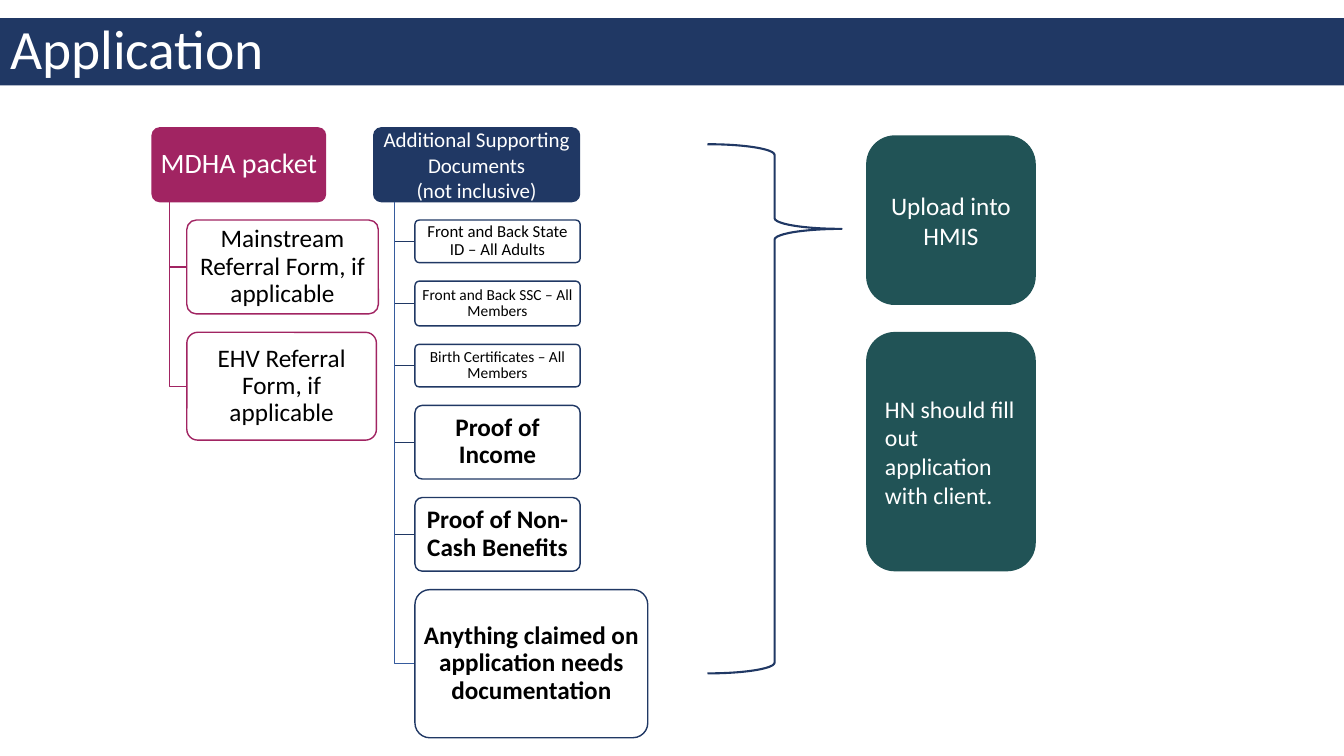
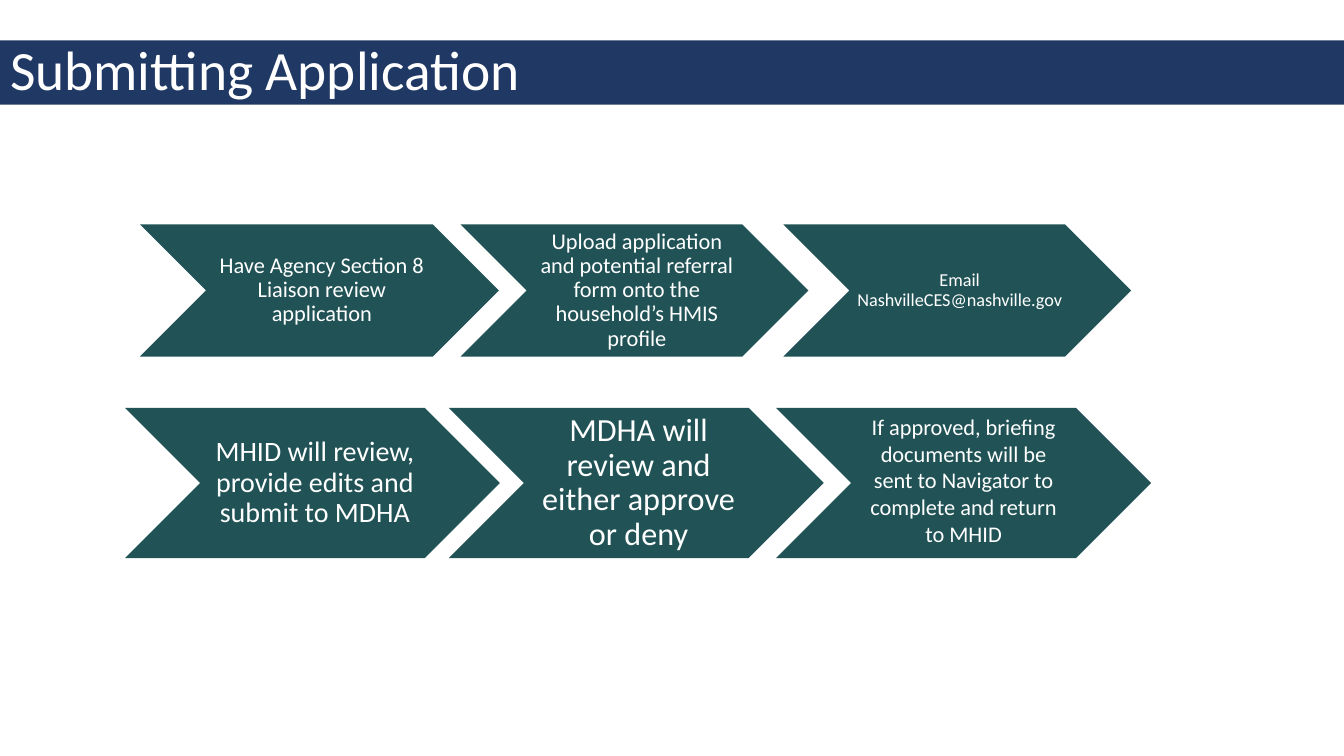
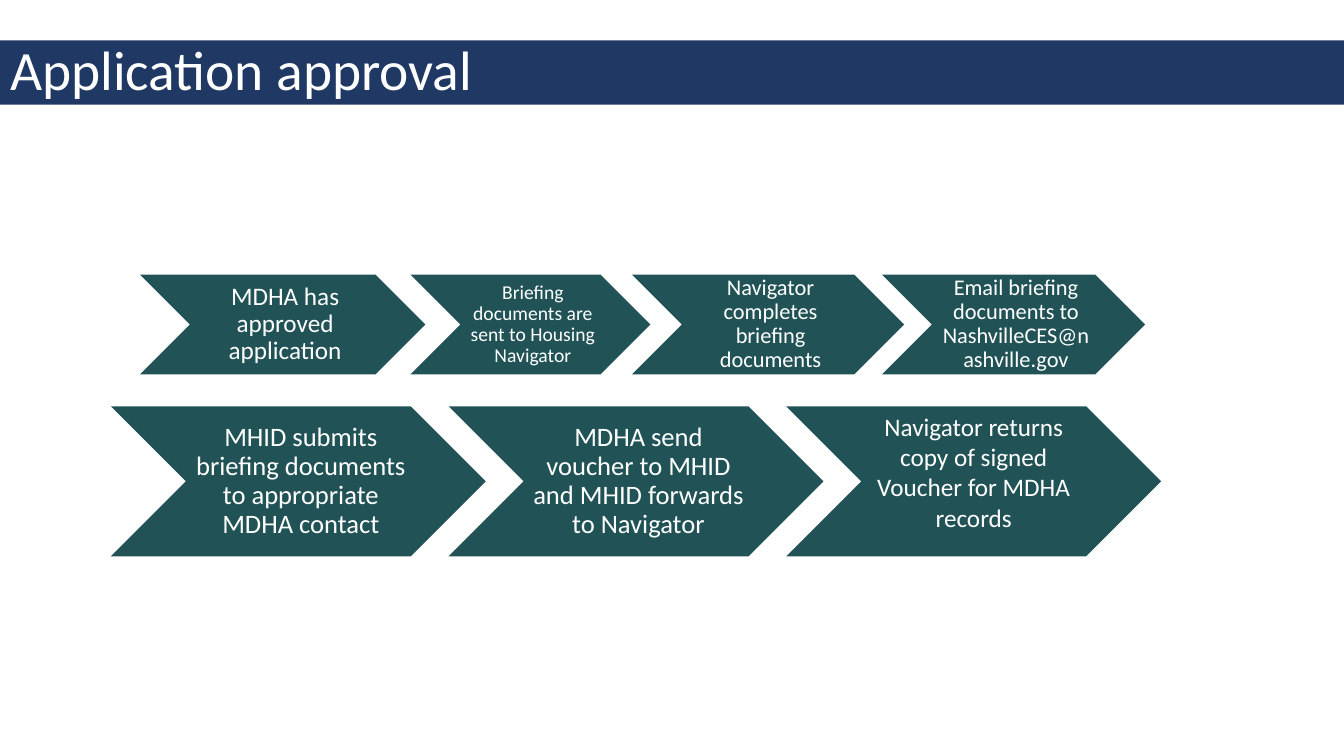
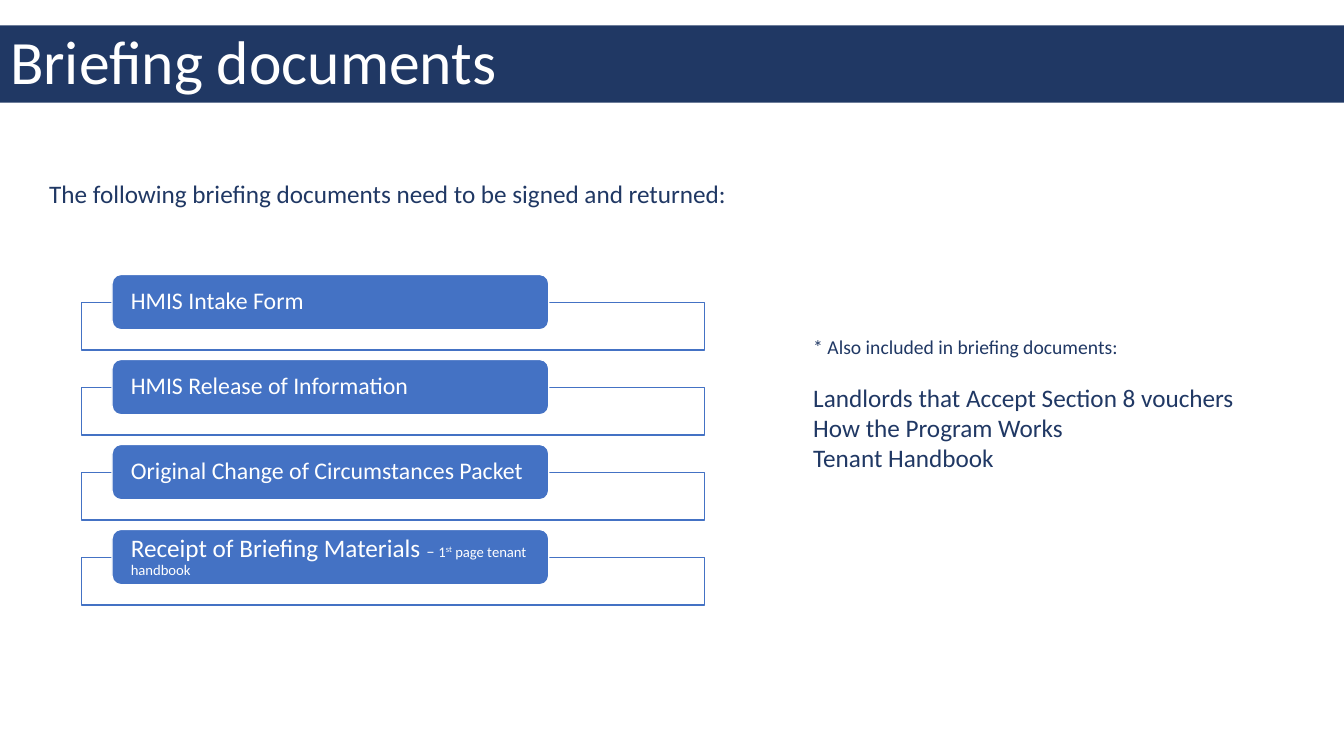
import pptx
import pptx.util
import pptx.dml.color
import pptx.enum.shapes
import pptx.enum.text

Pt = pptx.util.Pt
KIND = pptx.enum.shapes.MSO_SHAPE
ALIGN = pptx.enum.text.PP_ALIGN
ANCHOR = pptx.enum.text.MSO_ANCHOR

FONT = "Calibri"
COLORS = {
    "navy": "203864", "berry": "A12462", "teal": "215356", "steel": "365B9D",
    "blue": "4472C4", "white": "FFFFFF", "black": "000000",
}
WIDE = (7.2, 3.6, 7.2, 3.6)
TIGHT = (3, 2, 3, 2)
SMALL = (2, 1.5, 2, 1.5)


def tint(name):
    return pptx.dml.color.RGBColor.from_string(COLORS[name])


def style(para, size, color, bold=False, align=ALIGN.CENTER, line=0.9):
    para.alignment = align
    para.line_spacing = line
    para.font.name = FONT
    para.font.size = Pt(size)
    para.font.bold = bold
    para.font.color.rgb = tint(color)


def pad(frame, edges, anchor=ANCHOR.MIDDLE):
    frame.margin_left, frame.margin_top, frame.margin_right, frame.margin_bottom = map(Pt, edges)
    frame.vertical_anchor = anchor
    frame.word_wrap = True


def write(shape, text, size, color, edges=WIDE, anchor=ANCHOR.MIDDLE, **look):
    """Fill a shape with text, one paragraph a line."""
    frame = shape.text_frame
    pad(frame, edges, anchor)
    frame.text = text
    for para in frame.paragraphs:
        style(para, size, color, **look)
    return frame


def paint(shape, fill=None, line=None, width=1):
    shape.shadow.inherit = False
    if fill:
        shape.fill.solid()
        shape.fill.fore_color.rgb = tint(fill)
    else:
        shape.fill.background()
    if line:
        shape.line.color.rgb = tint(line)
        shape.line.width = Pt(width)
    else:
        shape.line.fill.background()


def block(slide, kind, box, fill=None, line=None, width=1, adjust=()):
    shape = slide.shapes.add_shape(kind, *map(Pt, box))
    for i, value in enumerate(adjust):
        shape.adjustments[i] = value
    paint(shape, fill, line, width)
    return shape


def start(deck, text, top, height, size=39.6):
    """New slide with its title band."""
    slide = deck.slides.add_slide(deck.slide_layouts[5])
    band = slide.shapes.title
    band.left, band.top, band.width, band.height = map(Pt, (0, top, 960, height))
    band.fill.solid()
    band.fill.fore_color.rgb = tint("navy")
    frame = write(band, text, size, "white", align=ALIGN.LEFT)
    frame.auto_size = pptx.enum.text.MSO_AUTO_SIZE.NONE
    return slide


def elbow(slide, x, top, end, y, color):
    path = slide.shapes.build_freeform(Pt(x), Pt(top), scale=1.0)
    path.add_line_segments([(Pt(x), Pt(y)), (Pt(end), Pt(y))], close=False)
    paint(path.convert_to_shape(), line=color)


def tree(slide, left, width, text, size, color, rows, line=0.9, last=None):
    """Head box with a stack of boxes hung below it."""
    top, height, gap = 91.4, 52.6, 13.2
    head = block(slide, KIND.ROUNDED_RECTANGLE, (left, top, width, height),
                 color, color, adjust=[0.1])
    write(head, text, size, "white", TIGHT if line < 1 else SMALL, line=line)
    base = top + height
    rail, x, y = left + 0.1 * width, left + 0.2 * width, base + gap
    for wide, high, label, points, bold in rows:
        final = last and label == rows[-1][2]
        elbow(slide, rail, base, x, y + high / 2, last if final else color)
        leaf = block(slide, KIND.ROUNDED_RECTANGLE, (x, y, wide, high),
                     "white", color, adjust=[0.1])
        write(leaf, label, points, "black", TIGHT if points > 12 else SMALL, bold=bold)
        y += high + gap


def step(slide, left, top, width, height, text, size, loose=False):
    """One chevron of a process; a loose one has text from the top."""
    shape = block(slide, KIND.CHEVRON, (left, top, width, height), "teal")
    if loose:
        write(shape, text, size, "white", WIDE, ANCHOR.TOP, line=1)
    else:
        write(shape, text, size, "white", (5.5, 2, 2, 2))


def flow(slide, top, height, steps):
    for left, width, *rest in steps:
        step(slide, left, top, width, height, *rest)


def note(slide, box, text, size):
    shape = slide.shapes.add_textbox(*map(Pt, box))
    return write(shape, text, size, "navy", anchor=ANCHOR.TOP, align=ALIGN.LEFT, line=1)


def form(slide, top, parts):
    """Outlined bar with a filled label; parts are text, size, raised."""
    block(slide, KIND.RECTANGLE, (58.3, top + 20, 445, 34), "white", "blue")
    label = block(slide, KIND.ROUNDED_RECTANGLE, (80, top, 312, 39.6), "blue", "white")
    pad(label.text_frame, (11.5, 0, 11.5, 0))
    para = label.text_frame.paragraphs[0]
    style(para, parts[0][1], "white", align=ALIGN.LEFT)
    for text, size, raised in parts:
        run = para.add_run()
        run.text = text
        if size != parts[0][1]:
            run.font.size = Pt(size)
        if raised:
            run._r.get_or_add_rPr().set("baseline", "30000")


def apply(deck):
    slide = start(deck, "Application", 13, 48)
    tree(slide, 108.7, 123.8, "MDHA packet", 20, "berry", [
        (136.8, 67, "Mainstream Referral Form, if applicable", 18, False),
        (135.4, 77, "EHV Referral Form, if applicable", 18, False),
    ])
    tree(slide, 267, 147, "Additional Supporting Documents\n(not inclusive)", 15, "navy", [
        (118, 30.4, "Front and Back State ID – All Adults", 12, False),
        (118, 32, "Front and Back SSC – All Members", 11, False),
        (118, 30.4, "Birth Certificates – All Members", 11, False),
        (118, 52.6, "Proof of Income", 18, True),
        (118, 52.6, "Proof of Non-Cash Benefits", 18, True),
        (166.3, 105.8, "Anything claimed on application needs documentation", 18, True),
    ], line=1, last="steel")
    # Brace and what follows from it
    block(slide, KIND.RIGHT_BRACE, (505.4, 103, 95.8, 378), line="navy", width=1.5,
          adjust=[0.08, 0.16])
    for top, height, text, size, align in (
        (97.2, 120.2, "Upload into HMIS", 18, ALIGN.CENTER),
        (237.6, 170, "HN should fill out application with client.", 17, ALIGN.LEFT),
    ):
        card = block(slide, KIND.ROUNDED_RECTANGLE, (619.2, top, 120.2, height), "teal", "teal")
        write(card, text, size, "white", align=align, line=1)


def submit(deck):
    slide = start(deck, "Submitting Application", 28.8, 46)
    flow(slide, 160.3, 94.4, [
        (100, 256.3, "Have Agency Section 8 Liaison review application", 16),
        (329, 248.4, "Upload application and potential referral form onto the "
                     "household’s HMIS profile", 16),
        (559.5, 248.4, "Email NashvilleCES@nashville.gov", 13),
    ])
    flow(slide, 291.4, 107.2, [
        (89.3, 267.8, "MHID will review, provide edits and submit to MDHA", 20),
        (320.6, 267.8, "MDHA will review and either approve or deny", 23),
        (554.4, 267.8, "If approved, briefing documents will be sent to Navigator "
                       "to complete and return to MHID", 16, True),
    ])


def approve(deck):
    slide = start(deck, "Application approval", 28.8, 46)
    flow(slide, 196.2, 71.2, [
        (100, 203.8, "MDHA has approved application", 18),
        (293.2, 171.4, "Briefing documents are sent to Housing Navigator", 14),
        (451.5, 194.4, "Navigator completes briefing documents", 16),
        (630, 188, "Email briefing documents to NashvilleCES@nashville.gov", 16),
    ])
    texts = [
        ("MHID submits briefing documents to appropriate MDHA contact", 19),
        ("MDHA send voucher to MHID and MHID forwards to Navigator", 19),
        ("Navigator returns copy of signed Voucher for MDHA records", 18, True),
    ]
    flow(slide, 290.2, 107.2, [(79.2 + 241.2 * i, 267.8, *text) for i, text in enumerate(texts)])


def brief(deck):
    slide = start(deck, "Briefing documents", 18.2, 55.2, 44)
    note(slide, (28, 124, 505, 29),
         "The following briefing documents need to be signed and returned:", 18)
    forms = [
        [("HMIS Intake Form", 17, False)],
        [("HMIS Release of Information", 17, False)],
        [("Original Change of Circumstances Packet", 17, False)],
        [("Receipt of Briefing Materials ", 18, False), ("– ", 12, False),
         ("1", 10.5, False), ("st", 10.5, True), (" page tenant handbook", 10.5, False)],
    ]
    for i, parts in enumerate(forms):
        form(slide, 196 + 60.7 * i, parts)
    # Side note, smaller lead line
    frame = note(slide, (573.8, 235.5, 317, 106.5),
                 "* Also included in briefing documents:\n"
                 "Landlords that Accept Section 8 vouchers\n"
                 "How the Program Works\nTenant Handbook", 18)
    frame.paragraphs[0].font.size = Pt(14)
    frame.paragraphs[1].space_before = Pt(17)


def main():
    deck = pptx.Presentation()
    deck.slide_width, deck.slide_height = Pt(960), Pt(540)
    for build in (apply, submit, approve, brief):
        build(deck)
    deck.save("out.pptx")


if __name__ == "__main__":
    main()
